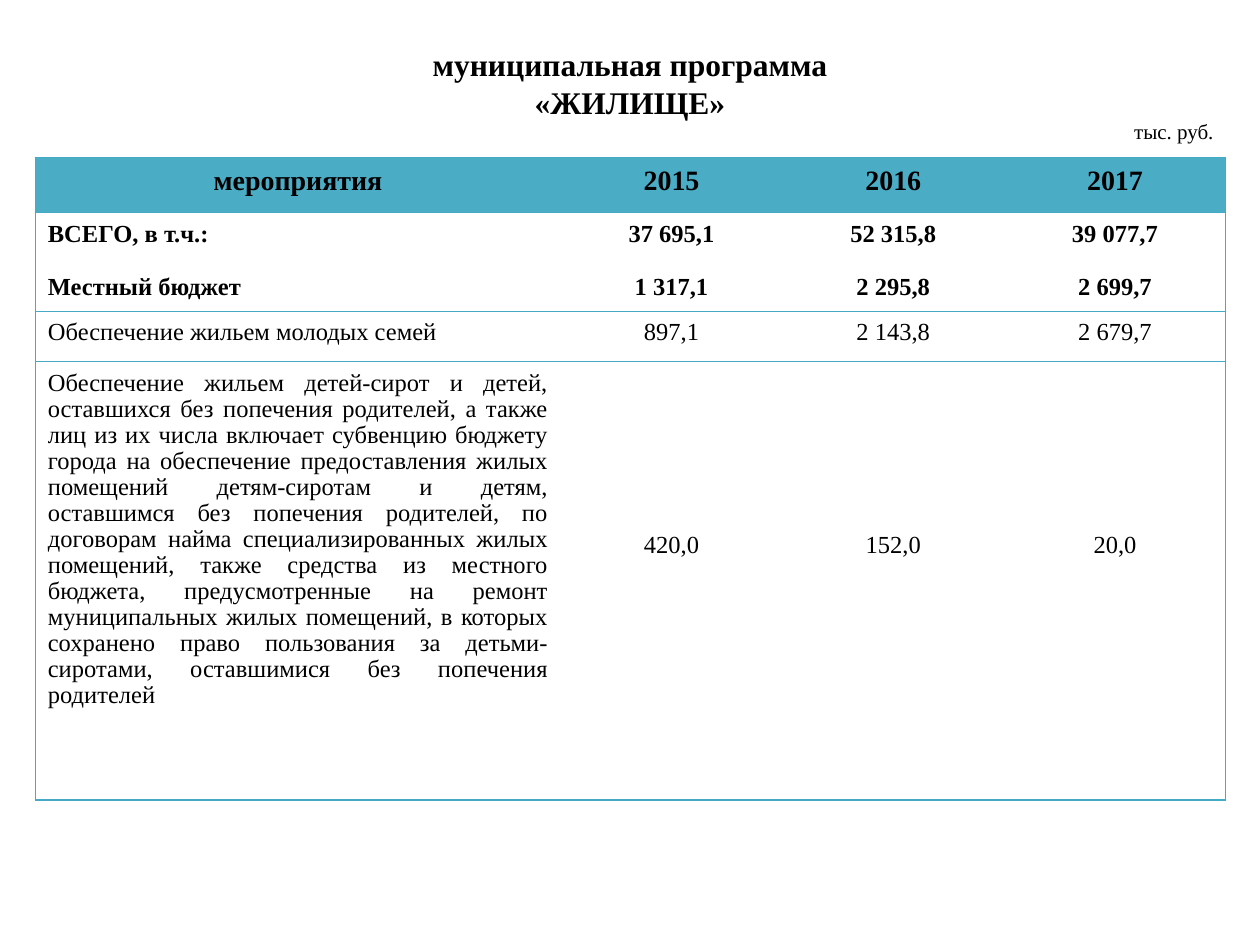
"""Build the slide with the budget table of the municipal housing programme."""
from typing import NamedTuple

from lxml import etree
from pptx import Presentation
from pptx.dml.color import RGBColor
from pptx.enum.text import MSO_ANCHOR, PP_ALIGN
from pptx.oxml.ns import qn
from pptx.util import Inches, Pt

CENTER, JUSTIFY, RIGHT = PP_ALIGN.CENTER, PP_ALIGN.JUSTIFY, PP_ALIGN.RIGHT
MIDDLE = MSO_ANCHOR.MIDDLE
FONT = "Times New Roman"
COLORS = {"text": "000000", "header": "4BACC6", "border": "46AAC5"}
PLAIN_TABLE_STYLE = "{2D5ABB26-0587-4C30-8999-92F81FD0307C}"
COLUMN_WIDTHS = (4.17, 1.76, 1.76, 1.76)
CELL_MARGIN = 0.07


class BudgetRow(NamedTuple):
    height: float
    texts: tuple[str, ...]
    size: int = 14
    bold: bool = False
    header: bool = False
    value_margin: float = CELL_MARGIN


ROWS = (
    BudgetRow(0.44, ("мероприятия", "2015", "2016", "2017"), 16, True, True),
    BudgetRow(0.78, ("ВСЕГО, в т.ч.:\nМестный бюджет", "37 695,1\n1 317,1",
                     "52 315,8\n2 295,8", "39 077,7\n2 699,7"), bold=True),
    BudgetRow(0.4, ("Обеспечение жильем молодых семей", "897,1", "2 143,8", "2 679,7")),
    BudgetRow(3.48, (
        "Обеспечение жильем детей-сирот и детей, оставшихся без попечения родителей, "
        "а также лиц из их числа включает субвенцию бюджету города на обеспечение "
        "предоставления жилых помещений детям-сиротам и детям, оставшимся без попечения "
        "родителей, по договорам найма специализированных жилых помещений, также средства "
        "из местного бюджета, предусмотренные на ремонт муниципальных жилых помещений, "
        "в которых сохранено право пользования за детьми-сиротами, оставшимися без "
        "попечения родителей", "420,0", "152,0", "20,0"), value_margin=1.36),
)


def format_text(text_frame, size: float, alignment, bold: bool = False) -> None:
    """Apply the slide's font and an alignment to all text of a frame."""
    for paragraph in text_frame.paragraphs:
        paragraph.alignment = alignment
        for run in paragraph.runs:
            run.font.name = FONT
            run.font.size = Pt(size)
            run.font.bold = bold
            run.font.color.rgb = RGBColor.from_string(COLORS["text"])


def set_borders(cell, sides: str) -> None:
    """Draw thin lines on the given sides, in the order L, R, T, B."""
    properties = cell._tc.get_or_add_tcPr()
    for index, side in enumerate(sides):
        line = etree.Element(qn(f"a:ln{side}"), w=str(Pt(0.75)))
        fill = etree.SubElement(line, qn("a:solidFill"))
        etree.SubElement(fill, qn("a:srgbClr"), val=COLORS["border"])
        properties.insert(index, line)


def fill_cell(cell, row: BudgetRow, column: int) -> None:
    """Write and format one table cell."""
    is_label = column == 0
    cell.margin_left = cell.margin_right = Inches(0.1)
    cell.margin_top = Inches(CELL_MARGIN if is_label else row.value_margin)
    cell.margin_bottom = Inches(CELL_MARGIN)
    cell.text_frame.text = row.texts[column]
    alignment = JUSTIFY if is_label and not row.header else CENTER
    format_text(cell.text_frame, row.size, alignment, row.bold)
    for index, paragraph in enumerate(cell.text_frame.paragraphs):
        paragraph.line_spacing = 0.96
        if index:
            paragraph.space_before = Pt(15.5)
    if row.header:
        cell.fill.solid()
        cell.fill.fore_color.rgb = RGBColor.from_string(COLORS["header"])
    else:
        cell.fill.background()
    outer_side = "L" if is_label else "R" if column == len(row.texts) - 1 else ""
    set_borders(cell, outer_side + "TB")


def add_budget_table(slide) -> None:
    """Add the table of activities and yearly sums."""
    shape = slide.shapes.add_table(
        len(ROWS), len(COLUMN_WIDTHS), Inches(0.28), Inches(1.25),
        Inches(sum(COLUMN_WIDTHS)), Inches(sum(row.height for row in ROWS)))
    table = shape.table
    table.horz_banding = False
    table._tbl.tblPr.find(qn("a:tableStyleId")).text = PLAIN_TABLE_STYLE
    for column, width in zip(table.columns, COLUMN_WIDTHS):
        column.width = Inches(width)
    for row_index, row in enumerate(ROWS):
        table.rows[row_index].height = Inches(row.height)
        for column_index in range(len(row.texts)):
            fill_cell(table.cell(row_index, column_index), row, column_index)


def main() -> None:
    """Create and save the presentation."""
    presentation = Presentation()
    presentation.slide_width, presentation.slide_height = Inches(10), Inches(7.5)
    slide = presentation.slides.add_slide(presentation.slide_layouts[5])

    title = slide.shapes.title
    title.left, title.top = Inches(0.5), Inches(0.3)
    title.width, title.height = Inches(9), Inches(0.72)
    title.text_frame.text = "муниципальная программа\v«ЖИЛИЩЕ»"
    title.text_frame.vertical_anchor = MIDDLE
    format_text(title.text_frame, 18, CENTER, bold=True)

    add_budget_table(slide)

    unit_box = slide.shapes.add_textbox(Inches(8.23), Inches(0.89), Inches(1.5), Inches(0.3))
    unit_box.text_frame.word_wrap = True
    unit_box.text_frame.text = "тыс. руб."
    format_text(unit_box.text_frame, 12, RIGHT)

    presentation.save("out.pptx")


if __name__ == "__main__":
    main()
